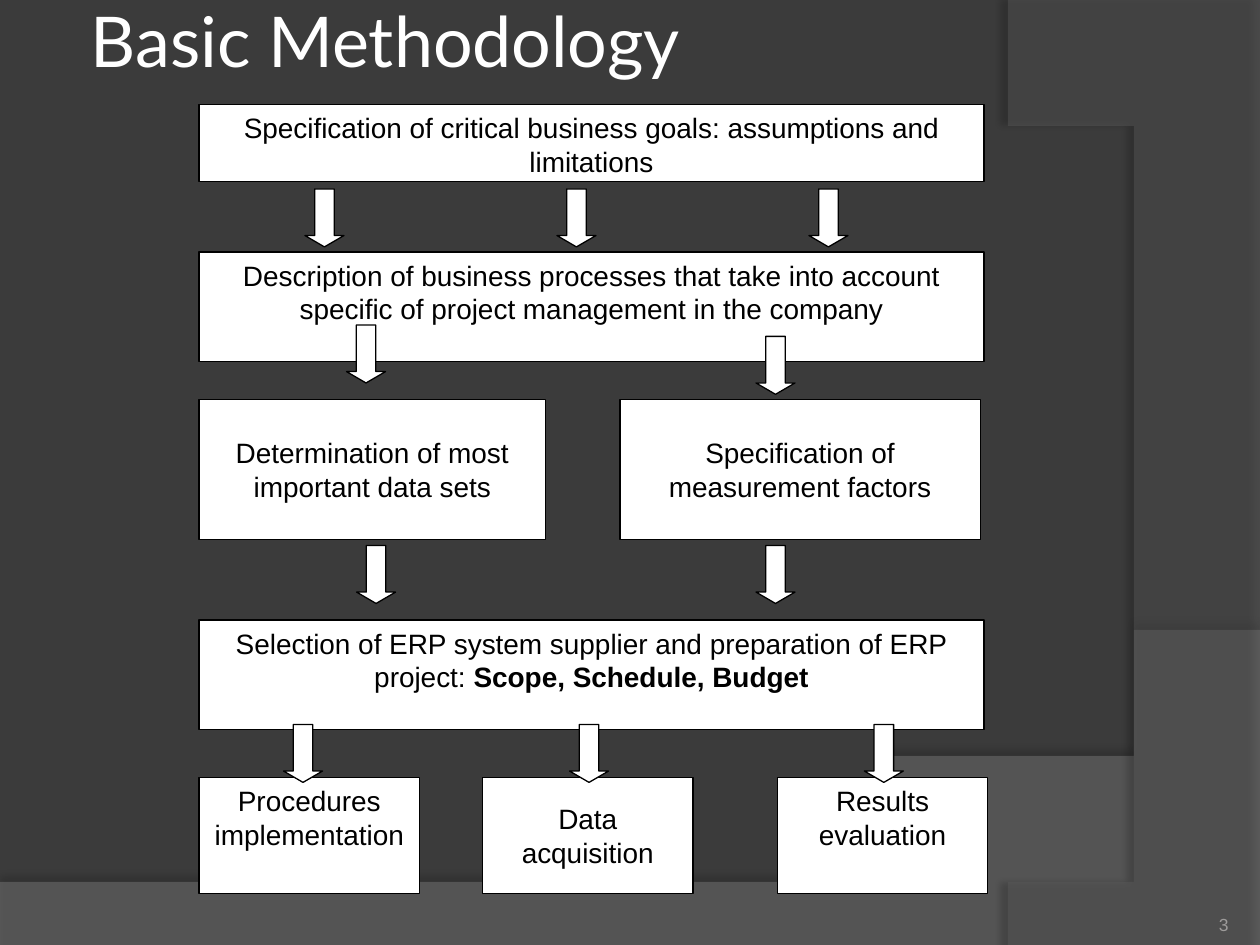
from lxml.etree import SubElement
from pptx import Presentation
from pptx.dml.color import RGBColor
from pptx.enum.shapes import MSO_SHAPE
from pptx.enum.text import MSO_ANCHOR, PP_ALIGN
from pptx.oxml.ns import qn
from pptx.util import Inches, Pt


def paint(target, color):
    target.solid()
    target.fore_color.rgb = RGBColor.from_string(color)


def curve(start, first, second, end, steps=60):
    points = []
    for step in range(1, steps + 1):
        t = step / steps
        parts = ((1 - t) ** 3, 3 * t * (1 - t) ** 2, 3 * t * t * (1 - t), t ** 3)
        points.append(tuple(
            sum(part * value for part, value in zip(parts, axis))
            for axis in zip(start, first, second, end)))
    return points


class Deck:
    """Holds the style and the current slide."""
    font = "Arial"
    title_font = "Lato"
    back = "3B3B3B"
    ink = "000000"
    paper = "FFFFFF"
    muted = "9D9B9A"

    def __init__(self):
        self.show = Presentation()
        self.show.slide_width = Inches(10)
        self.show.slide_height = Inches(7.5)
        self.slide = self.show.slides.add_slide(self.show.slide_layouts[6])
        paint(self.slide.background.fill, self.back)

    def wave(self, points, color, alpha, shade, dist, angle):
        pen = self.slide.shapes.build_freeform(*points[0], scale=Inches(1))
        pen.add_line_segments(points[1:], close=True)
        shape = pen.convert_to_shape()
        shape.line.fill.background()
        paint(shape.fill, color)
        props = shape._element.spPr
        tone = props.find(qn("a:solidFill"))[0]
        SubElement(tone, qn("a:alpha"), val=str(alpha * 1000))
        shape.shadow.inherit = False
        shadow = SubElement(
            props.find(qn("a:effectLst")), qn("a:outerShdw"),
            blurRad=str(Pt(4)), dist=str(Pt(dist)), dir=str(angle * 60000),
            algn="ctr", rotWithShape="0")
        tone = SubElement(shadow, qn("a:srgbClr"), val=self.ink)
        SubElement(tone, qn("a:alpha"), val=str(shade * 1000))

    def shape(self, kind, left, top, width, height):
        shape = self.slide.shapes.add_shape(
            kind, Inches(left), Inches(top), Inches(width), Inches(height))
        shape.shadow.inherit = False
        paint(shape.fill, self.paper)
        paint(shape.line.fill, self.ink)
        shape.line.width = Pt(0.75)
        return shape

    def words(self, frame, text, size, color, font, align, anchor, bold=""):
        frame.word_wrap = True
        frame.vertical_anchor = anchor
        para = frame.paragraphs[0]
        para.alignment = align
        para.font.size = Pt(size)
        para.font.name = font
        para.font.color.rgb = RGBColor.from_string(color)
        para.add_run().text = text
        if bold:
            run = para.add_run()
            run.text = bold
            run.font.bold = True

    def box(self, left, top, width, height, text, anchor=MSO_ANCHOR.TOP, bold=""):
        shape = self.shape(MSO_SHAPE.RECTANGLE, left, top, width, height)
        self.words(shape.text_frame, text, 16, self.ink, self.font,
                   PP_ALIGN.CENTER, anchor, bold)

    def arrow(self, left, top):
        shape = self.shape(MSO_SHAPE.DOWN_ARROW, left, top, 0.31, 0.46)
        shape.adjustments[1] = 0.29

    def label(self, left, top, width, height, text, size, color, font,
              align, anchor, inset):
        frame = self.slide.shapes.add_textbox(
            Inches(left), Inches(top), Inches(width), Inches(height)).text_frame
        frame.margin_left = frame.margin_right = Inches(inset)
        frame.margin_top = frame.margin_bottom = Inches(inset)
        self.words(frame, text, size, color, font, align, anchor)


def main():
    deck = Deck()
    middle = MSO_ANCHOR.MIDDLE
    edge, full = 1.58, 6.23

    deck.wave([(0, 7.05), (0, 7.5), (10, 7.5), (10, 5.2)]
              + curve((10, 5.2), (5.59, 7.29), (3.91, 7.19), (0, 7.05)),
              "7F7F7F", 45, 35, 3.5, 270)
    deck.wave([(8, 0), (10, 0.02), (10, 7.5), (8.21, 7.5)]
              + curve((8.21, 7.5), (9.35, 6.19), (10.18, 3), (8, 0)),
              "5E5E5E", 40, 45, 4, 180)

    deck.box(edge, 0.83, full, 0.61,
             "Specification of critical business goals: assumptions and limitations")
    deck.box(edge, 2, full, 0.87,
             "Description of business processes that take into account "
             "specific of project management in the company")
    deck.box(edge, 3.17, 2.75, 1.11,
             "Determination of most important data sets", middle)
    deck.box(4.92, 3.17, 2.86, 1.11, "Specification of measurement factors", middle)
    deck.box(edge, 4.92, full, 0.87,
             "Selection of ERP system supplier and preparation of ERP project: ",
             bold="Scope, Schedule, Budget")
    for left, width, text, anchor in (
            (edge, 1.75, "Procedures implementation", MSO_ANCHOR.TOP),
            (3.83, 1.67, "Data acquisition", middle),
            (6.17, 1.67, "Results evaluation", MSO_ANCHOR.TOP)):
        deck.box(left, 6.17, width, 0.92, text, anchor)

    for left, top in ((2.42, 1.5), (4.42, 1.5), (6.42, 1.5),
                      (2.75, 2.58), (6, 2.67),
                      (2.83, 4.33), (6, 4.33),
                      (2.25, 5.75), (4.52, 5.75), (6.86, 5.75)):
        deck.arrow(left, top)

    deck.label(0.67, 0.05, 7.5, 0.53, "Basic Methodology", 40, deck.paper,
               deck.title_font, PP_ALIGN.LEFT, middle, 0.05)
    deck.label(8.92, 7.02, 0.83, 0.4, "3", 10, deck.muted, deck.font,
               PP_ALIGN.RIGHT, MSO_ANCHOR.BOTTOM, 0)
    deck.show.save("out.pptx")


if __name__ == "__main__":
    main()
